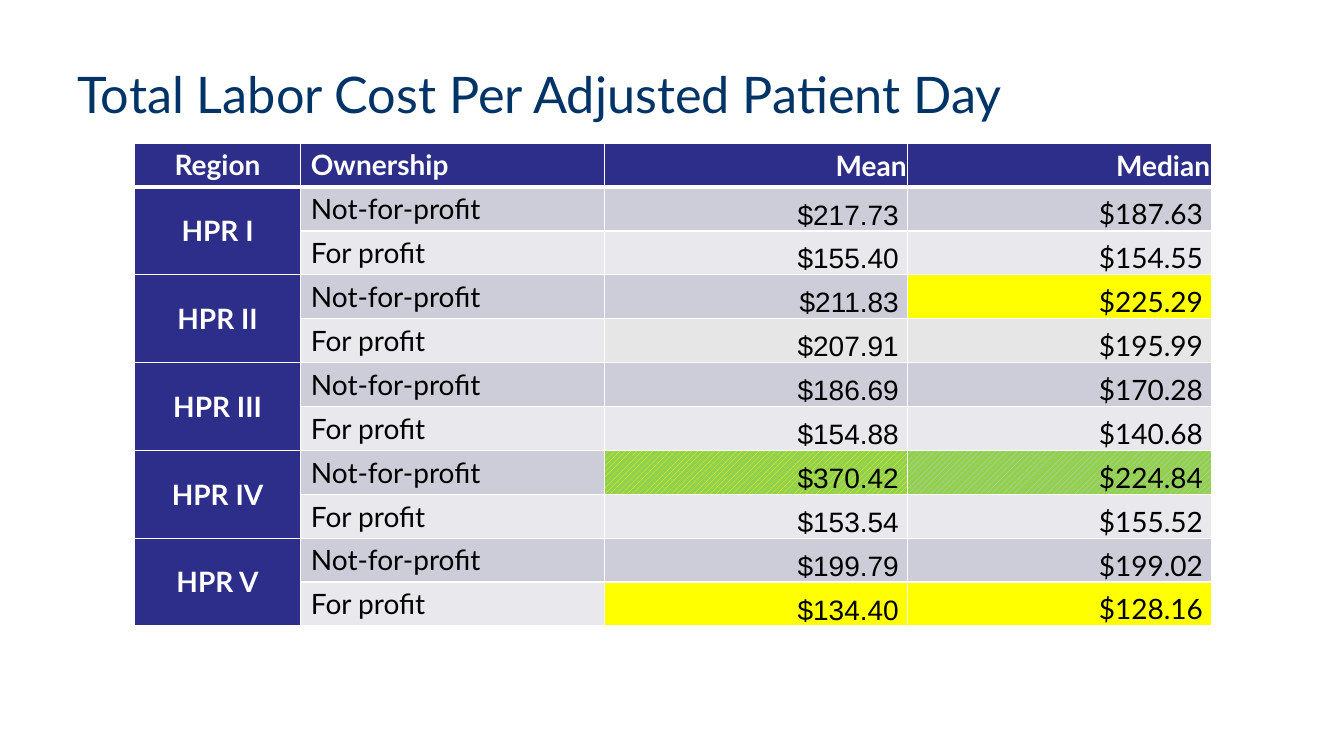
from lxml.etree import SubElement
from pptx import Presentation
from pptx.dml.color import RGBColor
from pptx.enum.dml import MSO_PATTERN as Pattern
from pptx.enum.text import MSO_ANCHOR as Anchor, MSO_AUTO_SIZE as Fit, PP_ALIGN as Align
from pptx.oxml.ns import qn
from pptx.util import Inches, Pt

NAVY = RGBColor(0x00, 0x33, 0x66)
INDIGO = RGBColor(0x2D, 0x2D, 0x8A)
WHITE = RGBColor(0xFF, 0xFF, 0xFF)
BLACK = RGBColor(0x00, 0x00, 0x00)
LILAC = RGBColor(0xCD, 0xCD, 0xDA)
PALE = RGBColor(0xE8, 0xE8, 0xED)
GRAY = RGBColor(0xE6, 0xE6, 0xE6)
YELLOW = RGBColor(0xFF, 0xFF, 0x00)
GREEN = RGBColor(0x92, 0xD0, 0x50)

WIDE, HIGH = Inches(13.33), Inches(7.5)
HEADS = ["Region", "Ownership", "Mean", "Median"]
OWNERS = ["Not-for-profit", "For profit"]
COSTS = {
    "HPR I": [("$217.73 ", "$187.63 "), ("$155.40 ", "$154.55 ")],
    "HPR II": [("$211.83 ", "$225.29 "), ("$207.91 ", "$195.99 ")],
    "HPR III": [("$186.69 ", "$170.28 "), ("$154.88 ", "$140.68 ")],
    "HPR IV": [("$370.42 ", "$224.84 "), ("$153.54 ", "$155.52 ")],
    "HPR V": [("$199.79 ", "$199.02 "), ("$134.40 ", "$128.16 ")],
}
MARKS = {
    (3, 3): YELLOW,
    (4, 2): GRAY,
    (4, 3): GRAY,
    (7, 2): (YELLOW, GREEN),
    (7, 3): (LILAC, GREEN),
    (10, 2): YELLOW,
    (10, 3): YELLOW,
}


def write(frame, text, size=20, face="Lato", color=BLACK, bold=False, align=Align.LEFT):
    """Put one formatted paragraph in a text frame."""
    para = frame.paragraphs[0]
    para.alignment = align
    run = para.add_run()
    run.text = text
    font = run.font
    font.size, font.name, font.bold = Pt(size), face, bold
    font.color.rgb = color


def paint(cell, fill):
    """Fill a cell with a colour, or with stripes for a colour pair."""
    if isinstance(fill, RGBColor):
        cell.fill.solid()
        cell.fill.fore_color.rgb = fill
    else:
        cell.fill.patterned()
        cell.fill.pattern = Pattern.WIDE_UPWARD_DIAGONAL
        cell.fill.fore_color.rgb, cell.fill.back_color.rgb = fill


def edge(cell, top=1, base=1):
    """Draw white borders round a cell."""
    props = cell._tc.get_or_add_tcPr()
    for side, width in (("L", 1), ("R", 1), ("T", top), ("B", base)):
        line = SubElement(props, qn(f"a:ln{side}"), w=str(Pt(width)))
        solid = SubElement(line, qn("a:solidFill"))
        SubElement(solid, qn("a:srgbClr"), val=str(WHITE))


def fill_cell(table, row, col, text, fill, anchor=Anchor.MIDDLE, tight=False, **style):
    """Format one cell and write its text."""
    cell = table.cell(row, col)
    edge(cell, top=3 if row == 1 else 1, base=3 if row == 0 else 1)
    paint(cell, fill)
    cell.vertical_anchor = anchor
    if tight:
        cell.margin_left = cell.margin_right = cell.margin_top = Inches(0.01)
        cell.margin_bottom = 0
    if text:
        write(cell.text_frame, text, **style)


def add_title(slide, text):
    """Place the slide title."""
    title = slide.shapes.title
    title.left, title.top = round(WIDE * 0.05), round(HIGH * 0.04)
    title.width, title.height = round(WIDE * 0.9), round(HIGH / 6)
    frame = title.text_frame
    frame.auto_size, frame.vertical_anchor = Fit.NONE, Anchor.MIDDLE
    write(frame, text, size=36, color=NAVY)


def add_costs(slide):
    """Build the cost table from the regions and their values."""
    count = 1 + len(COSTS) * len(OWNERS)
    frame = slide.shapes.add_table(
        count, len(HEADS), round(WIDE * 0.1), Inches(1.42), round(WIDE * 0.8), Inches(4.77))
    table = frame.table
    table.horz_banding = False
    for col, width in zip(table.columns, [1.65, 3.01, 3.01, 3.01]):
        col.width = Inches(width)

    head = {"color": WHITE, "bold": True}
    aligns = [Align.CENTER, Align.LEFT, Align.RIGHT, Align.RIGHT]
    for col, (text, align) in enumerate(zip(HEADS, aligns)):
        fill_cell(table, 0, col, text, INDIGO, tight=col > 1, align=align, **head)

    for index, (region, pairs) in enumerate(COSTS.items()):
        first = 1 + index * len(OWNERS)
        table.cell(first, 0).merge(table.cell(first + 1, 0))
        for step, (owner, costs) in enumerate(zip(OWNERS, pairs)):
            row, band = first + step, (LILAC, PALE)[step]
            name = "" if step else region
            fill_cell(table, row, 0, name, INDIGO, align=Align.CENTER, **head)
            fill_cell(table, row, 1, owner, band, anchor=Anchor.TOP)
            for col, (cost, face) in enumerate(zip(costs, ("Arial", "Lato")), 2):
                fill_cell(table, row, col, cost, MARKS.get((row, col), band),
                          anchor=Anchor.BOTTOM, tight=True, face=face, align=Align.RIGHT)


def main():
    """Build and save the slide."""
    deck = Presentation()
    deck.slide_width, deck.slide_height = WIDE, HIGH
    slide = deck.slides.add_slide(deck.slide_layouts[5])
    add_title(slide, "Total Labor Cost Per Adjusted Patient Day")
    add_costs(slide)
    deck.save("out.pptx")


if __name__ == "__main__":
    main()
